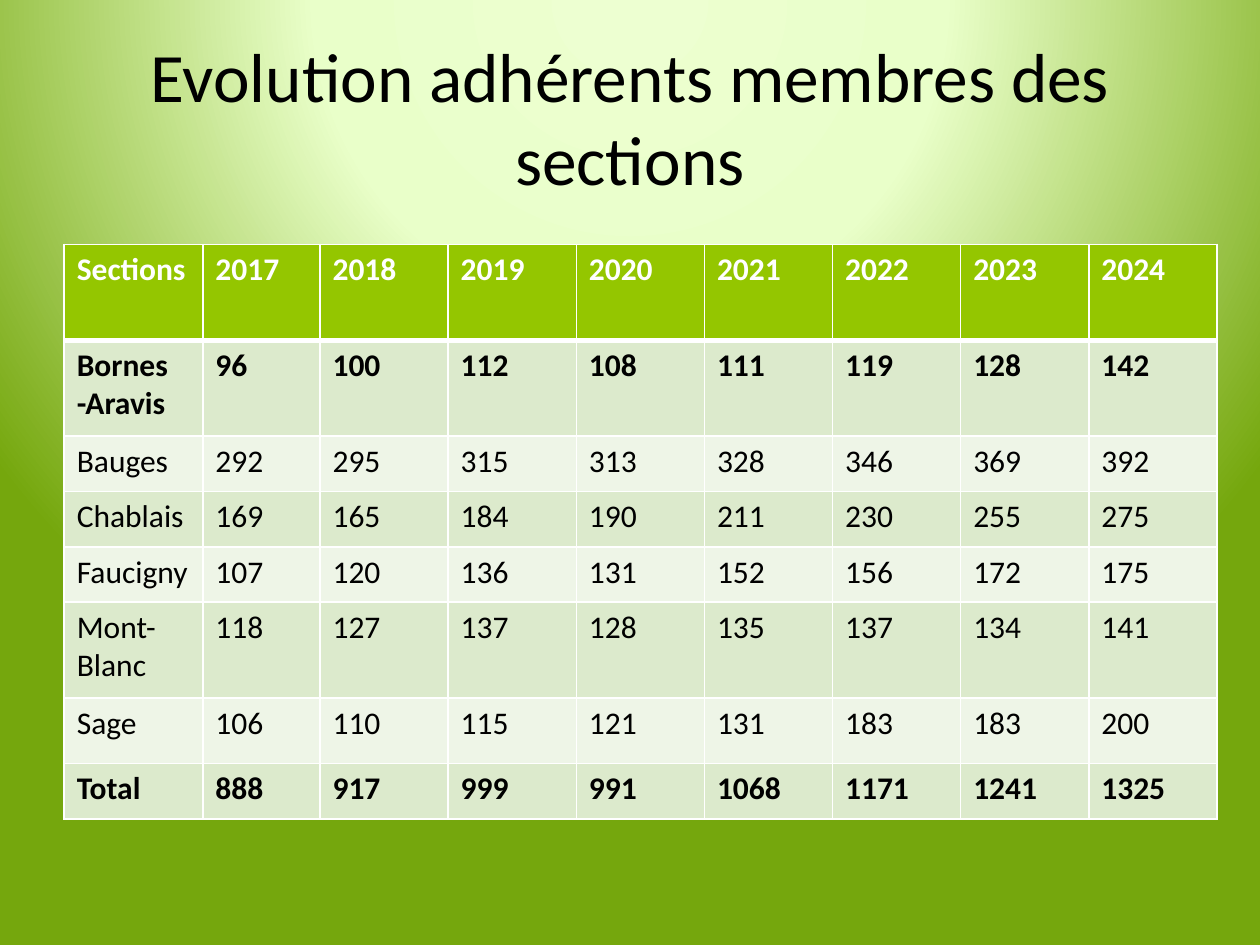
from dataclasses import dataclass

from pptx import Presentation
from pptx import util as u
from pptx.dml.color import RGBColor
from pptx.enum import text
from pptx.oxml import parse_xml
from pptx.oxml.ns import nsdecls


@dataclass(frozen=True)
class Theme:
    font: str = "Calibri"
    ink: str = "000000"
    white: str = "FFFFFF"
    header: str = "94C600"
    bands: tuple = ("DCEACC", "EEF5E7")
    glow: tuple = ((0, "EDFFD1"), (40, "E9FFC9"), (100, "75A70D"))
    title_size: float = 39.6
    table_size: float = 18
    rule: float = 1
    header_rule: float = 3


class SlideBuilder:
    def __init__(self, slide, theme):
        self.slide = slide
        self.theme = theme

    def background(self):
        """Fill the slide with a circular gradient centred above its top edge."""
        stops = "".join(
            f'<a:gs pos="{position * 1000}"><a:srgbClr val="{color}"/></a:gs>'
            for position, color in self.theme.glow
        )
        gradient = parse_xml(
            f'<a:gradFill {nsdecls("a")} rotWithShape="1"><a:gsLst>{stops}</a:gsLst>'
            '<a:path path="circle">'
            '<a:fillToRect l="50000" t="-80000" r="50000" b="180000"/>'
            "</a:path></a:gradFill>"
        )
        self.slide.background.fill.solid()
        properties = self.slide.element.cSld.bg.bgPr
        properties.replace(properties[0], gradient)

    def format_runs(self, frame, size, color, bold=False):
        for paragraph in frame.paragraphs:
            for run in paragraph.runs:
                run.font.name = self.theme.font
                run.font.size = u.Pt(size)
                run.font.bold = bold
                run.font.color.rgb = RGBColor.from_string(color)

    def title(self, wording, left, top, width, height):
        heading = self.slide.shapes.title
        heading.left, heading.top = u.Inches(left), u.Inches(top)
        heading.width, heading.height = u.Inches(width), u.Inches(height)
        frame = heading.text_frame
        frame.text = wording
        frame.word_wrap = True
        frame.auto_size = text.MSO_AUTO_SIZE.NONE
        frame.vertical_anchor = text.MSO_ANCHOR.MIDDLE
        frame.paragraphs[0].alignment = text.PP_ALIGN.CENTER
        self.format_runs(frame, self.theme.title_size, self.theme.ink)

    def cell_borders(self, cell, top, bottom):
        rule = self.theme.rule
        properties = cell._tc.get_or_add_tcPr()
        for side, points in (("L", rule), ("R", rule), ("T", top), ("B", bottom)):
            properties.append(parse_xml(
                f'<a:ln{side} {nsdecls("a")} w="{u.Pt(points)}"><a:solidFill>'
                f'<a:srgbClr val="{self.theme.white}"/></a:solidFill></a:ln{side}>'
            ))

    def table(self, rows, left, top, widths, heights, bold_rows):
        theme = self.theme
        grid = self.slide.shapes.add_table(
            len(rows), len(widths), u.Inches(left), u.Inches(top),
            u.Inches(sum(widths)), u.Inches(sum(heights)),
        ).table
        for column, width in zip(grid.columns, widths):
            column.width = u.Inches(width)
        for row, height in zip(grid.rows, heights):
            row.height = u.Inches(height)
        for r, values in enumerate(rows):
            is_header = r == 0
            fill = theme.header if is_header else theme.bands[(r - 1) % 2]
            color = theme.white if is_header else theme.ink
            above = theme.header_rule if r == 1 else theme.rule
            below = theme.header_rule if is_header else theme.rule
            for c, value in enumerate(values):
                cell = grid.cell(r, c)
                cell.text_frame.text = str(value)
                self.format_runs(cell.text_frame, theme.table_size, color, r in bold_rows)
                self.cell_borders(cell, above, below)
                cell.fill.solid()
                cell.fill.fore_color.rgb = RGBColor.from_string(fill)


MEMBERS = [
    ["Sections", *range(2017, 2025)],
    ["Bornes -Aravis", 96, 100, 112, 108, 111, 119, 128, 142],
    ["Bauges", 292, 295, 315, 313, 328, 346, 369, 392],
    ["Chablais", 169, 165, 184, 190, 211, 230, 255, 275],
    ["Faucigny", 107, 120, 136, 131, 152, 156, 172, 175],
    ["Mont-Blanc", 118, 127, 137, 128, 135, 137, 134, 141],
    ["Sage", 106, 110, 115, 121, 131, 183, 183, 200],
    ["Total", 888, 917, 999, 991, 1068, 1171, 1241, 1325],
]


def main():
    deck = Presentation()
    deck.slide_width, deck.slide_height = u.Inches(10), u.Inches(7.5)
    title_only = deck.slide_layouts[5]
    builder = SlideBuilder(deck.slides.add_slide(title_only), Theme())
    builder.background()
    builder.title("Evolution adhérents membres des sections", 0.5, 0.3, 9, 1.25)

    table_width, section_width, first_year_width = 9.15, 1.1, 0.93
    year_width = (table_width - section_width - first_year_width) / 7
    one_line, two_lines = 0.44, 0.76
    builder.table(
        MEMBERS, 0.51, 1.94,
        widths=[section_width, first_year_width] + [year_width] * 7,
        heights=[two_lines] * 2 + [one_line] * 3 + [two_lines, 0.52, one_line],
        bold_rows={0, 1, len(MEMBERS) - 1},
    )
    deck.save("out.pptx")


if __name__ == "__main__":
    main()
